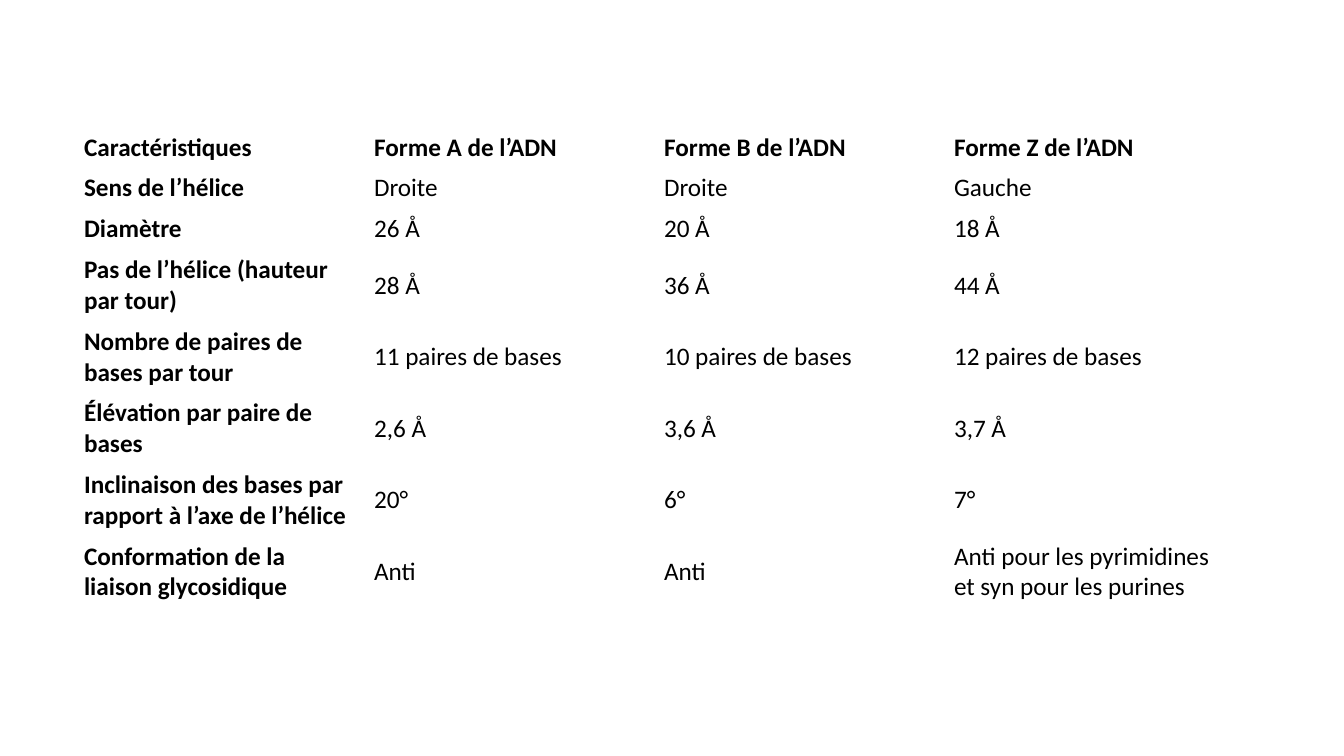
"""Build a slide comparing the A, B and Z forms of DNA in a table."""
from dataclasses import dataclass

from pptx import Presentation
from pptx.dml.color import RGBColor
from pptx.enum.text import MSO_ANCHOR
from pptx.slide import Slide
from pptx.table import _Cell
from pptx.util import Emu, Pt

EMU_PER_PX = 914400 / 100.8
NO_STYLE_NO_GRID = "{2D5ABB26-0587-4C30-8999-92F81FD0307C}"


@dataclass(frozen=True)
class Theme:
    font: str = "Calibri"
    size: Pt = Pt(18)
    ink: RGBColor = RGBColor(0x00, 0x00, 0x00)


@dataclass(frozen=True)
class Trait:
    label: str
    form_a: str
    form_b: str
    form_z: str
    height: int = 71


THEME = Theme()
SLIDE_WIDTH, SLIDE_HEIGHT = 1344, 756
LEFT, TOP = 74, 127
COLUMN_WIDTH, COLUMN_COUNT = 290, 4
SINGLE_LINE = 40

TRAITS = (
    Trait("Caractéristiques", "Forme A de l’ADN", "Forme B de l’ADN",
          "Forme Z de l’ADN", SINGLE_LINE),
    Trait("Sens de l’hélice", "Droite", "Droite", "Gauche", SINGLE_LINE),
    Trait("Diamètre", "26 Å", "20 Å", "18 Å", SINGLE_LINE),
    Trait("Pas de l’hélice (hauteur par tour)", "28 Å", "36 Å", "44 Å"),
    Trait("Nombre de paires de bases par tour", "11 paires de bases",
          "10 paires de bases", "12 paires de bases"),
    Trait("Élévation par paire de bases", "2,6 Å", "3,6 Å", "3,7 Å"),
    Trait("Inclinaison des bases par rapport à l’axe de l’hélice",
          "20°", "6°", "7°"),
    Trait("Conformation de la liaison glycosidique", "Anti", "Anti",
          "Anti pour les pyrimidines et syn pour les purines"),
)


def px(length: int) -> Emu:
    return Emu(round(length * EMU_PER_PX))


def write_cell(cell: _Cell, wording: str, bold: bool) -> None:
    cell.fill.background()
    cell.vertical_anchor = MSO_ANCHOR.MIDDLE
    run = cell.text_frame.paragraphs[0].add_run()
    run.text = wording
    run.font.name = THEME.font
    run.font.size = THEME.size
    run.font.bold = bold
    run.font.color.rgb = THEME.ink


def add_comparison(slide: Slide, traits: tuple[Trait, ...]) -> None:
    comparison = slide.shapes.add_table(
        len(traits), COLUMN_COUNT, px(LEFT), px(TOP),
        px(COLUMN_WIDTH * COLUMN_COUNT), px(sum(trait.height for trait in traits)),
    ).table
    comparison.horz_banding = False
    comparison._tbl.tblPr[0].text = NO_STYLE_NO_GRID
    for column in comparison.columns:
        column.width = px(COLUMN_WIDTH)
    for row_index, trait in enumerate(traits):
        row = comparison.rows[row_index]
        row.height = px(trait.height)
        wordings = (trait.label, trait.form_a, trait.form_b, trait.form_z)
        for column_index, wording in enumerate(wordings):
            heading = row_index == 0 or column_index == 0
            write_cell(row.cells[column_index], wording, heading)


def main() -> None:
    deck = Presentation()
    deck.slide_width, deck.slide_height = px(SLIDE_WIDTH), px(SLIDE_HEIGHT)
    slide = deck.slides.add_slide(deck.slide_layouts[6])
    add_comparison(slide, TRAITS)
    deck.save("out.pptx")


if __name__ == "__main__":
    main()
